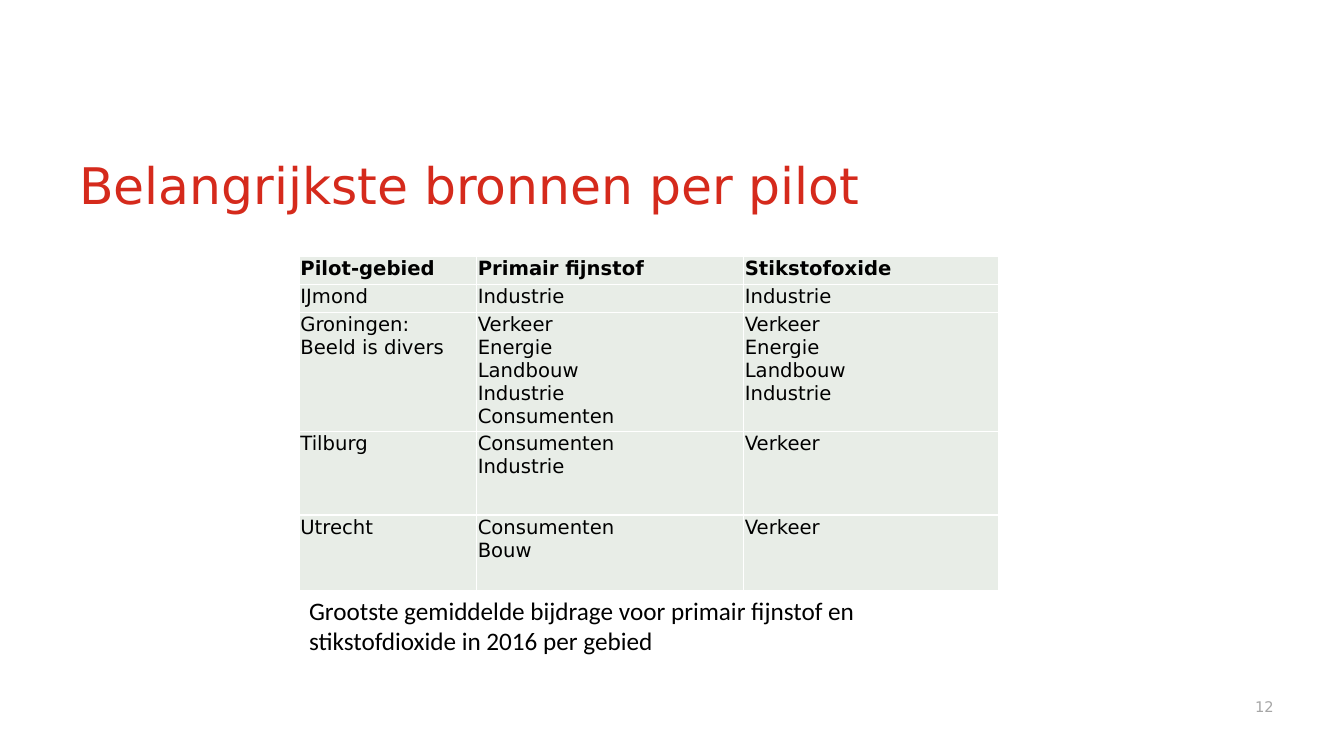
from dataclasses import dataclass

from lxml.etree import SubElement
from pptx import Presentation
from pptx.dml.color import RGBColor
from pptx.enum.text import MSO_ANCHOR, PP_ALIGN
from pptx.oxml.ns import qn
from pptx.util import Cm, Pt


@dataclass(frozen=True)
class Theme:
    sans: str = "DejaVu Sans"
    body: str = "Calibri"
    red: str = "D52A1C"
    black: str = "000000"
    gray: str = "A6A6A6"
    white: str = "FFFFFF"
    sage: str = "E8EDE7"
    title: float = 36
    note: float = 18
    cell: float = 14
    page: float = 10.5


class Deck:
    def __init__(self, theme):
        self.theme = theme
        self.file = Presentation()
        self.file.slide_width, self.file.slide_height = Cm(33.87), Cm(19.05)
        self.slide = self.file.slides.add_slide(self.file.slide_layouts[6])

    def style(self, frame, font, size, color, bold=False):
        for para in frame.paragraphs:
            para.font.name = font
            para.font.size = Pt(size)
            para.font.bold = bold
            para.font.color.rgb = RGBColor.from_string(color)

    def text(self, words, place, font, size, color, anchor=MSO_ANCHOR.TOP):
        frame = self.slide.shapes.add_textbox(*map(Cm, place)).text_frame
        frame.word_wrap = True
        frame.vertical_anchor = anchor
        frame.text = words
        self.style(frame, font, size, color)
        return frame

    def border(self, cell):
        props = cell._tc.get_or_add_tcPr()
        for side in ("lnL", "lnR", "lnT", "lnB"):
            line = SubElement(props, qn(f"a:{side}"), w=str(Pt(1)))
            fill = SubElement(line, qn("a:solidFill"))
            SubElement(fill, qn("a:srgbClr"), val=self.theme.white)

    def table(self, rows, left, top, widths, heights):
        look = self.theme
        grid = self.slide.shapes.add_table(
            len(rows), len(widths), Cm(left), Cm(top),
            Cm(sum(widths)), Cm(sum(heights))).table
        for col, width in zip(grid.columns, widths):
            col.width = Cm(width)
        for r, (row, height) in enumerate(zip(rows, heights)):
            grid.rows[r].height = Cm(height)
            for c, words in enumerate(row):
                cell = grid.cell(r, c)
                cell.margin_left = cell.margin_right = cell.margin_top = Cm(0.03)
                cell.margin_bottom = 0
                self.border(cell)
                cell.fill.solid()
                cell.fill.fore_color.rgb = RGBColor.from_string(look.sage)
                cell.text_frame.text = words
                self.style(cell.text_frame, look.sans, look.cell, look.black, r == 0)


# "\n" starts a paragraph, "\v" breaks a line inside one
SOURCES = [
    ("Pilot-gebied", "Primair fijnstof", "Stikstofoxide"),
    ("IJmond", "Industrie", "Industrie"),
    ("Groningen:\nBeeld is divers",
     "Verkeer\nEnergie\nLandbouw\nIndustrie\nConsumenten",
     "Verkeer\nEnergie\nLandbouw\nIndustrie"),
    ("Tilburg", "Consumenten\vIndustrie", "Verkeer"),
    ("Utrecht", "Consumenten\vBouw", "Verkeer"),
]


def main():
    look = Theme()
    deck = Deck(look)
    title = deck.text("Belangrijkste bronnen per pilot", (1.75, 2.92, 30.35, 2.64),
                      look.sans, look.title, look.red, MSO_ANCHOR.BOTTOM)
    title.paragraphs[0].line_spacing = 0.9
    page = deck.text("12", (18.21, 17.27, 13.89, 0.89),
                     look.sans, look.page, look.gray, MSO_ANCHOR.BOTTOM)
    page.margin_right = 0
    page.paragraphs[0].alignment = PP_ALIGN.RIGHT
    deck.table(SOURCES, 7.54, 6.45, (4.47, 6.73, 6.43), (0.71, 0.71, 2.95, 2.11, 1.9))
    deck.text("Grootste gemiddelde bijdrage voor primair fijnstof en "
              "stikstofdioxide in 2016 per gebied",
              (7.54, 14.88, 16.94, 1.8), look.body, look.note, look.black)
    deck.file.save("out.pptx")


if __name__ == "__main__":
    main()
